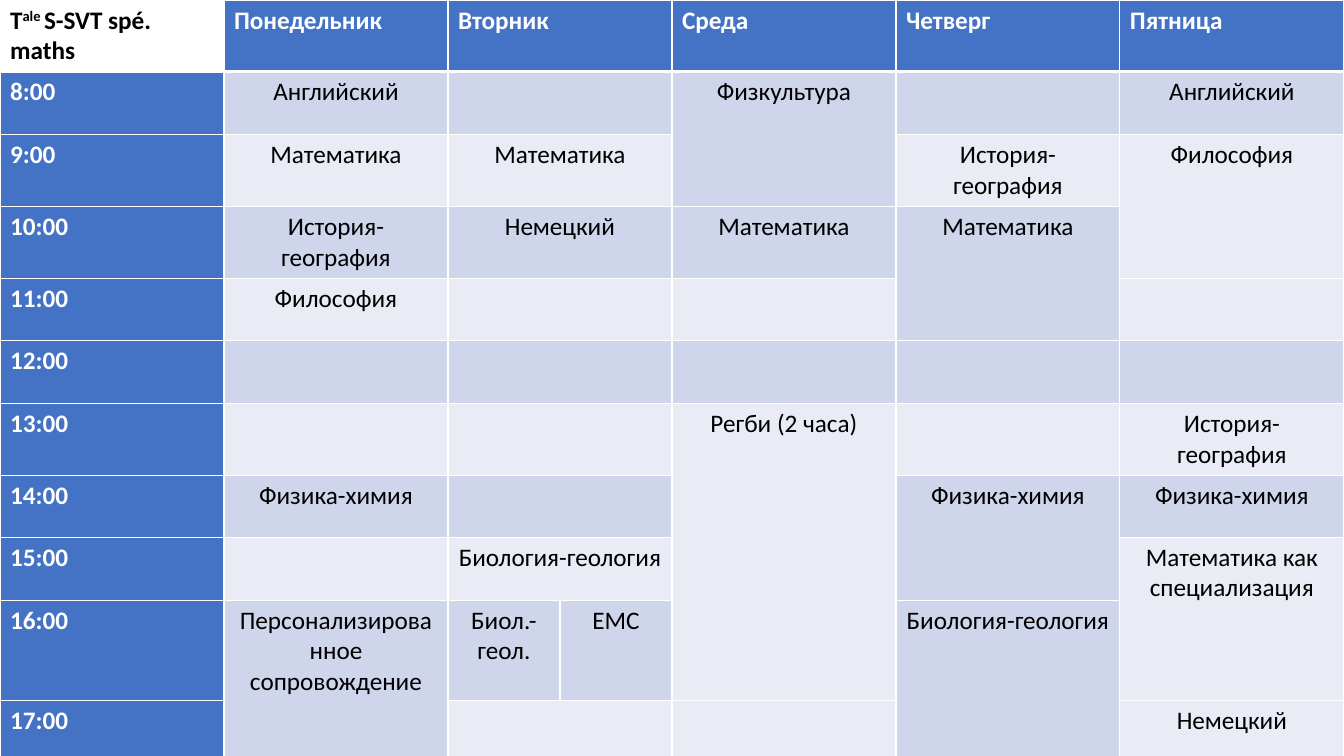
import dataclasses

import lxml.etree
import pptx
import pptx.dml.color
import pptx.enum.text
import pptx.oxml.ns
import pptx.util

LEFT, ABOVE = "<", "^"

CORNER = [("T", 0), ("ale ", 30000), ("S-SVT spé. maths", 0)]

TIMETABLE = [
    ["", "Понедельник", "Вторник", LEFT, "Среда", "Четверг", "Пятница"],
    ["8:00", "Английский", "", LEFT, "Физкультура", "", "Английский"],
    ["9:00", "Математика", "Математика", LEFT, ABOVE, "История-география", "Философия"],
    ["10:00", "История-география", "Немецкий", LEFT, "Математика", "Математика", ABOVE],
    ["11:00", "Философия", "", LEFT, "", ABOVE, ""],
    ["12:00", "", "", LEFT, "", "", ""],
    ["13:00", "", "", LEFT, "Регби (2 часа)", "", "История-география"],
    ["14:00", "Физика-химия", "", LEFT, ABOVE, "Физика-химия", "Физика-химия"],
    ["15:00", "", "Биология-геология", LEFT, ABOVE, ABOVE, "Математика как специализация"],
    ["16:00", "Персонализированное сопровождение", "Биол.-геол.", "EMC", ABOVE, "Биология-геология", ABOVE],
    ["17:00", ABOVE, "", LEFT, "", ABOVE, "Немецкий"],
]

SLIDE_SIZE = (1344, 756)
COLUMN_WIDTHS = [224, 224, 112, 112, 224, 224, 224]
ROW_HEIGHTS = [71, 63, 71, 72, 62, 63, 72, 62, 63, 100, 62]
PIXELS_PER_INCH = 100.8


@dataclasses.dataclass(frozen=True)
class Theme:
    font: str = "Calibri"
    size: int = 18
    heading: str = "4472C4"
    bands: tuple = ("E9EBF5", "CFD5EA")
    light: str = "FFFFFF"
    dark: str = "000000"
    border: int = 1
    heading_border: int = 3


THEME = Theme()


def px(length):
    return pptx.util.Inches(length / PIXELS_PER_INCH)


def rgb(value):
    return pptx.dml.color.RGBColor.from_string(value)


def span_size(row, column):
    bottom, right = row + 1, column + 1
    while right < len(COLUMN_WIDTHS) and TIMETABLE[row][right] == LEFT:
        right += 1
    while bottom < len(TIMETABLE) and TIMETABLE[bottom][column] == ABOVE:
        bottom += 1
    return bottom - row, right - column


def set_borders(cell, row):
    properties = cell._tc.get_or_add_tcPr()
    widths = {
        "lnL": THEME.border,
        "lnR": THEME.border,
        "lnT": THEME.heading_border if row == 1 else THEME.border,
        "lnB": THEME.heading_border if row == 0 else THEME.border,
    }
    for side, width in widths.items():
        line = lxml.etree.SubElement(properties, pptx.oxml.ns.qn(f"a:{side}"), w=str(pptx.util.Pt(width)))
        fill = lxml.etree.SubElement(line, pptx.oxml.ns.qn("a:solidFill"))
        lxml.etree.SubElement(fill, pptx.oxml.ns.qn("a:srgbClr"), val=THEME.light)


def format_cell(cell, row, column):
    is_corner = row == 0 and column == 0
    is_heading = row == 0 or column == 0
    if is_corner:
        cell.fill.background()
    else:
        cell.fill.solid()
        cell.fill.fore_color.rgb = rgb(THEME.heading if is_heading else THEME.bands[row % 2])
    paragraph = cell.text_frame.paragraphs[0]
    if not is_heading:
        paragraph.alignment = pptx.enum.text.PP_ALIGN.CENTER
    for run in paragraph.runs:
        run.font.name = THEME.font
        run.font.size = pptx.util.Pt(THEME.size)
        run.font.bold = is_heading
        run.font.color.rgb = rgb(THEME.light if is_heading and not is_corner else THEME.dark)


def fill_corner(cell):
    paragraph = cell.text_frame.paragraphs[0]
    for text, baseline in CORNER:
        run = paragraph.add_run()
        run.text = text
        run.font._element.set("baseline", str(baseline))


def add_timetable(slide):
    frame = slide.shapes.add_table(
        len(ROW_HEIGHTS), len(COLUMN_WIDTHS), 0, 0, px(sum(COLUMN_WIDTHS)), px(sum(ROW_HEIGHTS))
    )
    table = frame.table
    for column, width in zip(table.columns, COLUMN_WIDTHS):
        column.width = px(width)
    for row, height in zip(table.rows, ROW_HEIGHTS):
        row.height = px(height)
    for row, entries in enumerate(TIMETABLE):
        for column, entry in enumerate(entries):
            cell = table.cell(row, column)
            set_borders(cell, row)
            if entry in (LEFT, ABOVE):
                continue
            height, width = span_size(row, column)
            if height * width > 1:
                cell.merge(table.cell(row + height - 1, column + width - 1))
            if entry:
                cell.text_frame.text = entry
            elif row == 0:
                fill_corner(cell)
            format_cell(cell, row, column)


def main():
    presentation = pptx.Presentation()
    presentation.slide_width, presentation.slide_height = map(px, SLIDE_SIZE)
    slide = presentation.slides.add_slide(presentation.slide_layouts[6])
    add_timetable(slide)
    presentation.save("out.pptx")


if __name__ == "__main__":
    main()
